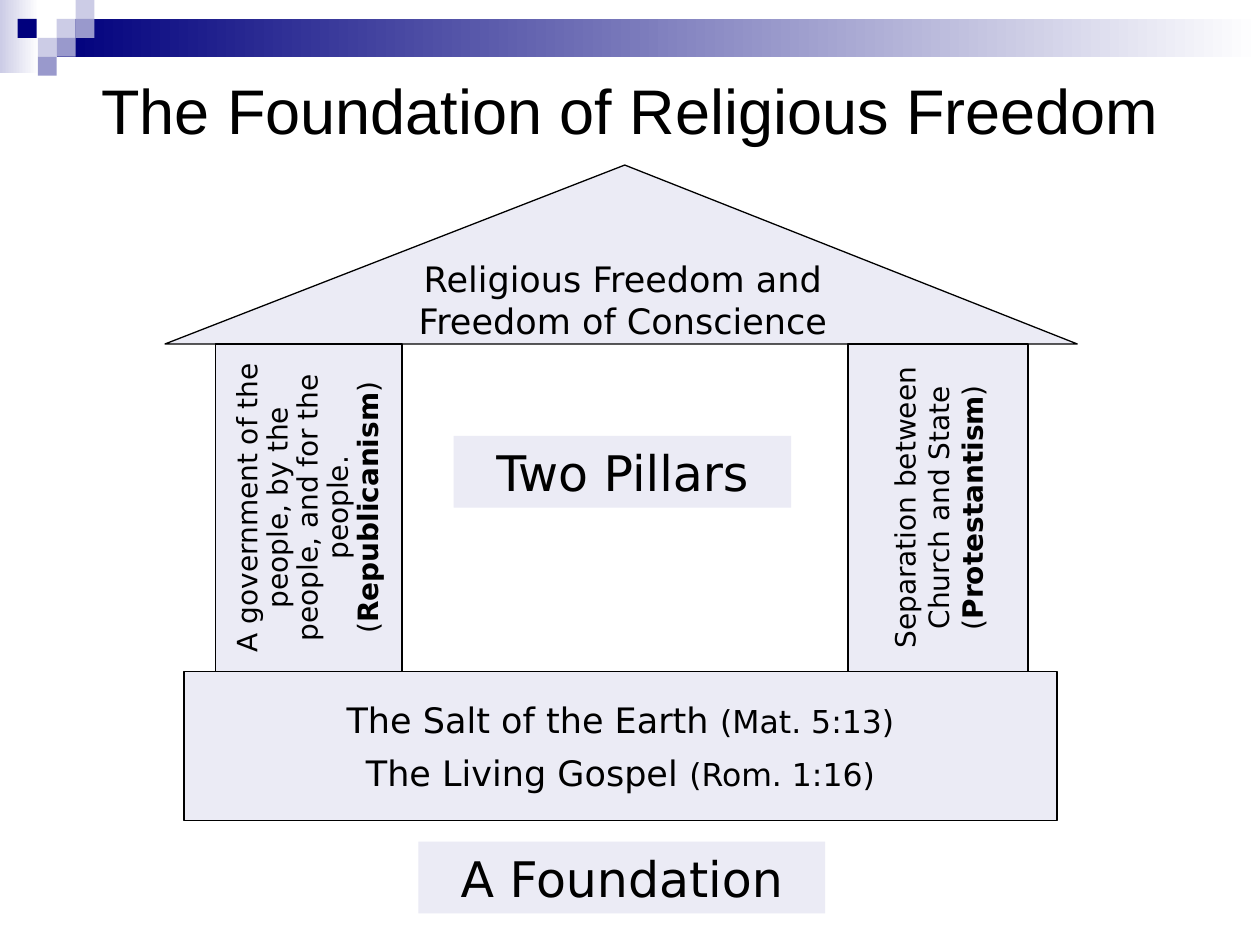
from dataclasses import dataclass

from pptx import Presentation
from pptx.dml.color import RGBColor
from pptx.enum.shapes import MSO_SHAPE
from pptx.enum.text import MSO_ANCHOR, PP_ALIGN
from pptx.util import Inches, Pt

RECTANGLE = MSO_SHAPE.RECTANGLE
TRIANGLE = MSO_SHAPE.ISOSCELES_TRIANGLE
MIDDLE = MSO_ANCHOR.MIDDLE
CENTER = PP_ALIGN.CENTER


@dataclass(frozen=True)
class Theme:
    """Colours, fonts and type sizes of the slide."""
    navy: str = "00007D"
    violet: str = "9999CC"
    lavender: str = "CCCCE6"
    stone: str = "EBEBF5"
    white: str = "FFFFFF"
    ink: str = "000000"
    title_font: str = "Arial"
    body_font: str = "DejaVu Sans"
    title: int = 36
    label: int = 28
    body: int = 20
    verse: int = 18
    pillar: int = 16
    outline: float = 0.75


THEME = Theme()


def add_block(page, bounds, color, kind=RECTANGLE, outlined=False):
    """Add a filled preset shape, outlined on request."""
    block = page.shapes.add_shape(kind, *map(Inches, bounds))
    block.shadow.inherit = False
    block.fill.solid()
    block.fill.fore_color.rgb = RGBColor.from_string(color)
    if outlined:
        block.line.color.rgb = RGBColor.from_string(THEME.ink)
        block.line.width = Pt(THEME.outline)
    else:
        block.line.fill.background()
    return block


def add_fade(page, bounds, color):
    """Add a rectangle that fades to white from left to right."""
    block = add_block(page, bounds, color)
    block.fill.gradient()
    block.fill.gradient_angle = 0
    for stop, shade in zip(block.fill.gradient_stops, (color, THEME.white)):
        stop.color.rgb = RGBColor.from_string(shade)


def write(box, paragraphs, font=THEME.body_font, wrap=True, before=0, spacing=None):
    """Write centred paragraphs made of (text, size, bold) runs."""
    frame = box.text_frame
    frame.word_wrap = wrap
    frame.vertical_anchor = MIDDLE
    for index, spans in enumerate(paragraphs):
        para = frame.add_paragraph() if index else frame.paragraphs[0]
        para.alignment = CENTER
        para.space_before = Pt(before)
        if spacing:
            para.line_spacing = spacing
        for text, size, bold in spans:
            span = para.add_run()
            span.text = text
            span.font.name = font
            span.font.size = Pt(size)
            span.font.bold = bold
            span.font.color.rgb = RGBColor.from_string(THEME.ink)


def add_banner(page):
    """Add the fading bands and the checker squares at the top."""
    add_fade(page, (0, 0, 0.31, 0.58), THEME.lavender)
    add_fade(page, (0.45, 0.15, 9.55, 0.3), THEME.navy)
    cell = 0.15
    squares = [
        (0.45, 0.15, THEME.lavender), (0.6, 0, THEME.lavender),
        (0.6, 0.15, THEME.violet), (0.3, 0.3, THEME.lavender),
        (0.14, 0.15, THEME.navy), (0.45, 0.3, THEME.violet),
        (0.3, 0.45, THEME.violet),
    ]
    for left, top, color in squares:
        add_block(page, (left, top, cell, cell), color)


def add_title(page, text):
    """Add the slide title."""
    box = page.shapes.add_textbox(*map(Inches, (0, 0.36, 10, 1.02)))
    write(box, [[(text, THEME.title, False)]], THEME.title_font)


def add_roof(page, lines):
    """Add the triangular roof with its lines of text."""
    roof = add_block(page, (1.31, 1.31, 7.24, 1.42), THEME.stone, TRIANGLE, True)
    roof.adjustments[0] = 0.504
    write(roof, [[(line, THEME.body, False)] for line in lines], wrap=False)


def add_pillar(page, left, width, paragraphs, spacing=None):
    """Add a pillar whose text reads upwards."""
    pillar = add_block(page, (left, 2.73, width, 2.6), THEME.stone, outlined=True)
    sized = [[(text, THEME.pillar, bold) for text, bold in spans] for spans in paragraphs]
    write(pillar, sized, spacing=spacing)
    pillar.text_frame._txBody.bodyPr.set("vert", "vert270")


def add_base(page, lines):
    """Add the base with one verse reference on each line."""
    base = add_block(page, (1.46, 5.33, 6.93, 1.18), THEME.stone, outlined=True)
    spans = [[(text, THEME.body, False), (verse, THEME.verse, False)]
             for text, verse in lines]
    write(base, spans, wrap=False, before=6)


def add_label(page, bounds, text):
    """Add a large label on a plain plate."""
    write(add_block(page, bounds, THEME.stone), [[(text, THEME.label, False)]])


def main():
    """Build the slide and save the deck."""
    deck = Presentation()
    deck.slide_width, deck.slide_height = Inches(10), Inches(7.5)
    page = deck.slides.add_slide(deck.slide_layouts[6])
    add_banner(page)
    add_title(page, "The Foundation of Religious Freedom")
    add_roof(page, ["Religious Freedom and", "Freedom of Conscience"])
    add_pillar(page, 1.71, 1.48, [
        [("A government of the people, by the people, and for the people. (", False),
         ("Republicanism", True), (")", False)],
    ], spacing=0.9)
    add_base(page, [
        ("The Salt of the Earth ", "(Mat. 5:13)"),
        ("The Living Gospel ", "(Rom. 1:16)"),
    ])
    add_pillar(page, 6.73, 1.43, [
        [("Separation between Church and State", False)],
        [("(", False), ("Protestantism", True), (")", False)],
    ])
    add_label(page, (3.6, 3.46, 2.68, 0.57), "Two Pillars")
    add_label(page, (3.32, 6.68, 3.23, 0.57), "A Foundation")
    deck.save("out.pptx")


if __name__ == "__main__":
    main()
